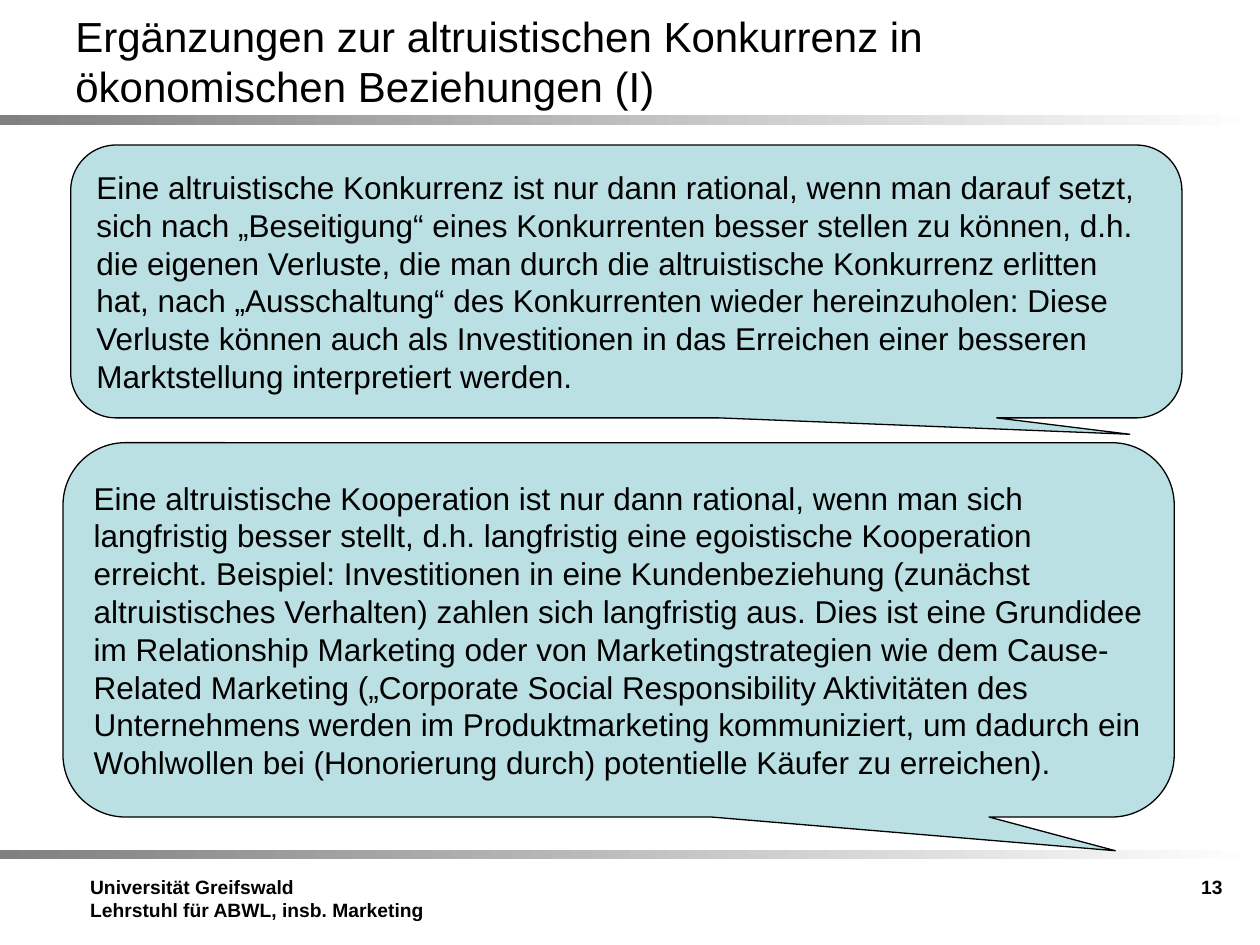
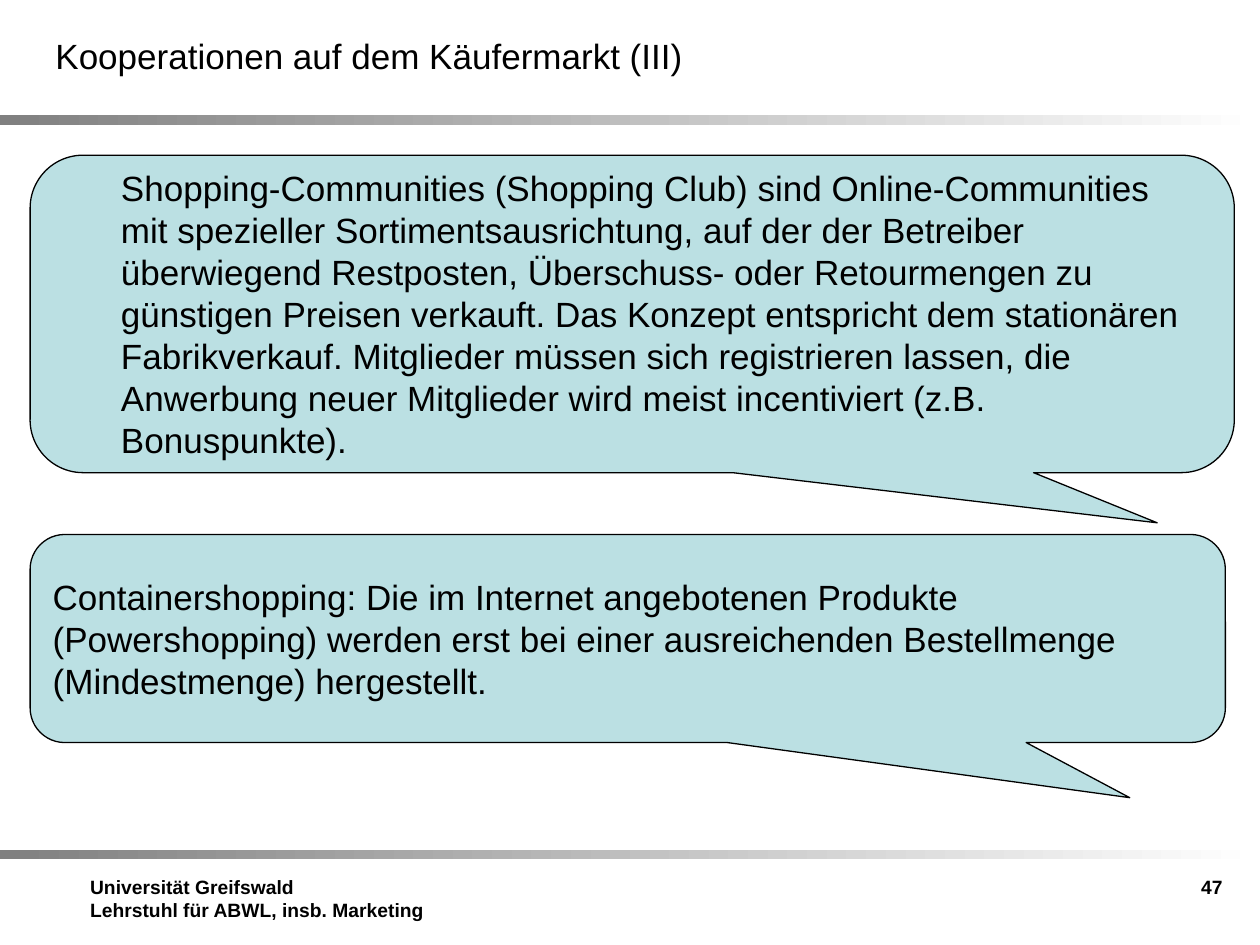
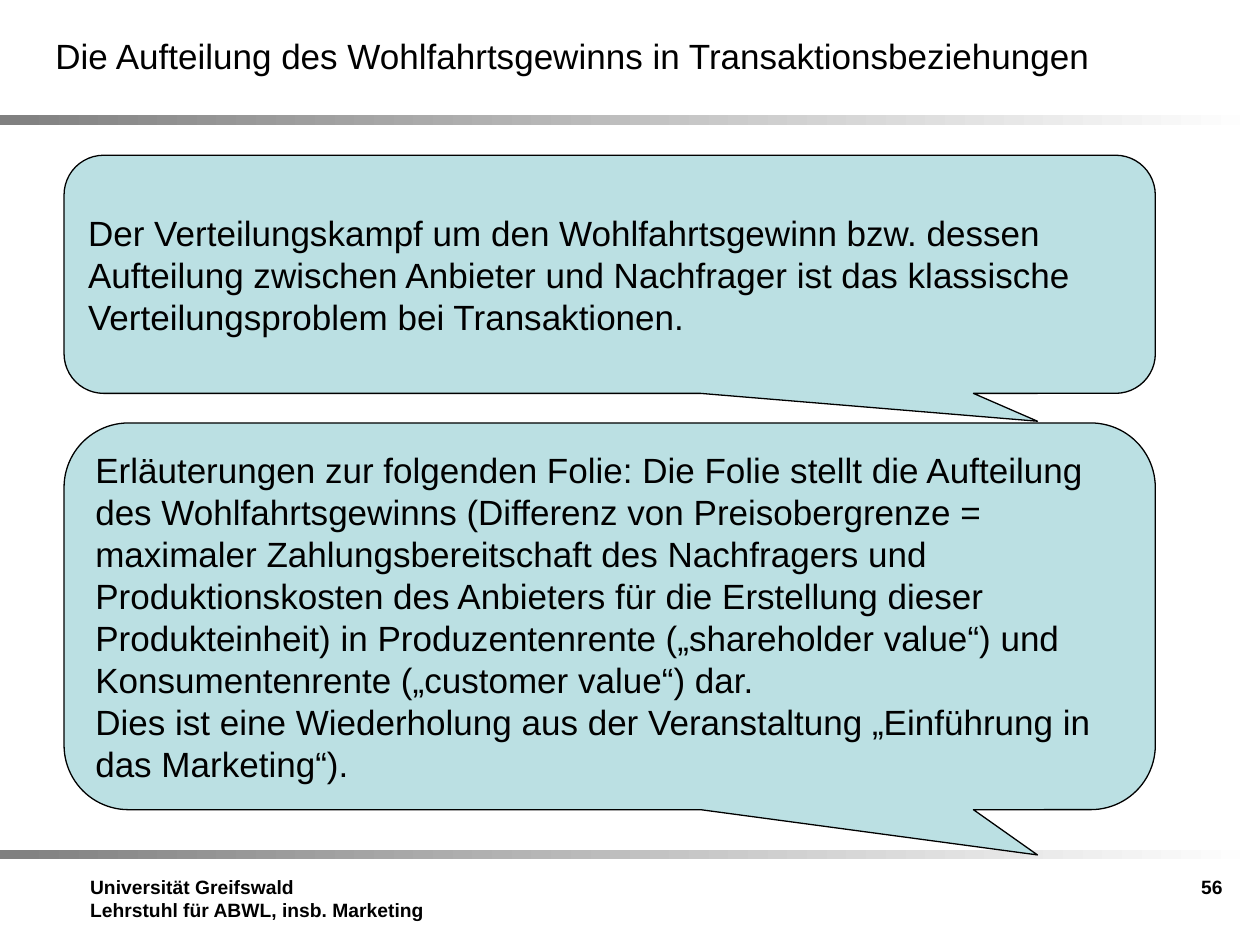
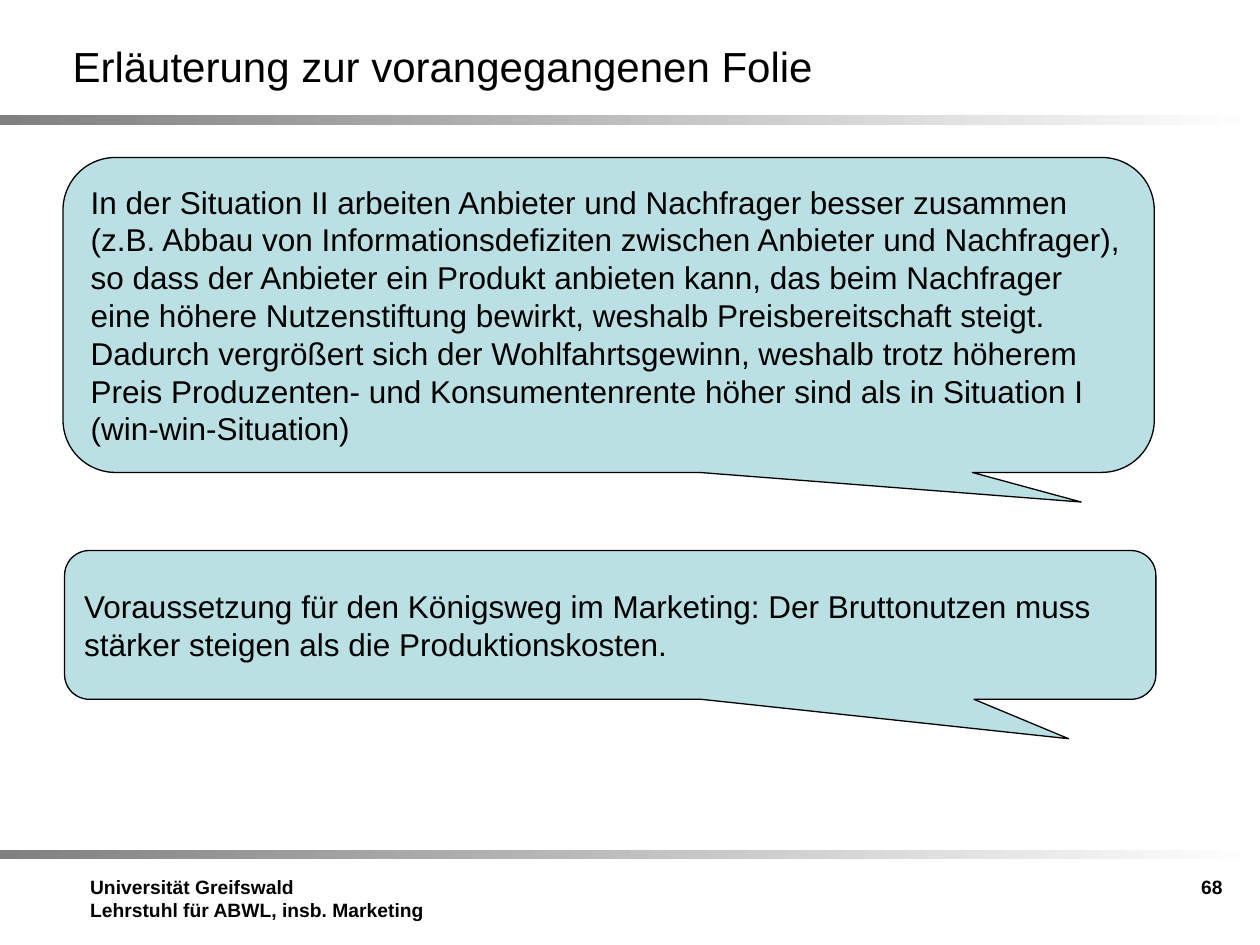
from pptx import Presentation
from pptx.dml.color import RGBColor
from pptx.enum.shapes import MSO_SHAPE
from pptx.enum.text import MSO_ANCHOR, PP_ALIGN
from pptx.util import Pt

RECT = MSO_SHAPE.RECTANGLE
BUBBLE = MSO_SHAPE.ROUNDED_RECTANGULAR_CALLOUT
TOP, MIDDLE = MSO_ANCHOR.TOP, MSO_ANCHOR.MIDDLE
LEFT, RIGHT = PP_ALIGN.LEFT, PP_ALIGN.RIGHT

FONT = "Arial"
COLORS = {"ink": "000000", "bubble": "BBE0E3", "dark": "808080", "light": "FFFFFF"}
WIDTH, HEIGHT = 720, 540
BANDS = (65.7, 485.7)
FOOTER = ("Universität Greifswald", "Lehrstuhl für ABWL, insb. Marketing")

# Title: left, top, size. Bubble: box, tip offset, text size, indent, paragraphs.
SLIDES = [
    {
        "page": 13,
        "title": ("Ergänzungen zur altruistischen Konkurrenz in ökonomischen "
                  "Beziehungen (I)", 36, 11.9, 24),
        "bubbles": [
            ((40.4, 82.9, 635, 155.9), (0.453, 0.56), 18, 0, [
                "Eine altruistische Konkurrenz ist nur dann rational, wenn man "
                "darauf setzt, sich nach „Beseitigung“ eines Konkurrenten besser "
                "stellen zu können, d.h. die eigenen Verluste, die man durch die "
                "altruistische Konkurrenz erlitten hat, nach „Ausschaltung“ des "
                "Konkurrenten wieder hereinzuholen: Diese Verluste können auch als "
                "Investitionen in das Erreichen einer besseren Marktstellung "
                "interpretiert werden."]),
            ((36, 253, 635, 213.9), (0.447, 0.59), 18, 0, [
                "Eine altruistische Kooperation ist nur dann rational, wenn man "
                "sich langfristig besser stellt, d.h. langfristig eine egoistische "
                "Kooperation erreicht. Beispiel: Investitionen in eine "
                "Kundenbeziehung (zunächst altruistisches Verhalten) zahlen sich "
                "langfristig aus. Dies ist eine Grundidee im Relationship Marketing "
                "oder von Marketingstrategien wie dem Cause-Related Marketing "
                "(„Corporate Social Responsibility Aktivitäten des Unternehmens "
                "werden im Produktmarketing kommuniziert, um dadurch ein Wohlwollen "
                "bei (Honorierung durch) potentielle Käufer zu erreichen)."]),
        ],
    },
    {
        "page": 47,
        "title": ("Kooperationen auf dem Käufermarkt (III)", 24.6, 9.1, 20),
        "bubbles": [
            ((17.2, 88.7, 688.1, 181.4), (0.436, 0.658), 20, 36, [
                "Shopping-Communities (Shopping Club) sind Online-Communities mit "
                "spezieller Sortimentsausrichtung, auf der der Betreiber "
                "überwiegend Restposten, Überschuss- oder Retourmengen zu günstigen "
                "Preisen verkauft. Das Konzept entspricht dem stationären "
                "Fabrikverkauf. Mitglieder müssen sich registrieren lassen, die "
                "Anwerbung neuer Mitglieder wird meist incentiviert (z.B. "
                "Bonuspunkte)."]),
            ((17.2, 305.4, 683, 118.9), (0.42, 0.765), 20, 0, [
                "Containershopping: Die im Internet angebotenen Produkte "
                "(Powershopping) werden erst bei einer ausreichenden Bestellmenge "
                "(Mindestmenge) hergestellt."]),
        ],
    },
    {
        "page": 56,
        "title": ("Die Aufteilung des Wohlfahrtsgewinns in "
                  "Transaktionsbeziehungen", 24.6, 9.1, 20),
        "bubbles": [
            ((36.6, 88.7, 623.6, 136.1), (0.392, 0.617), 20, 0, [
                "Der Verteilungskampf um den Wohlfahrtsgewinn bzw. dessen "
                "Aufteilung zwischen Anbieter und Nachfrager ist das klassische "
                "Verteilungsproblem bei Transaktionen."]),
            ((36.6, 241.7, 623.6, 221), (0.392, 0.617), 20, 0, [
                "Erläuterungen zur folgenden Folie: Die Folie stellt die Aufteilung "
                "des Wohlfahrtsgewinns (Differenz von Preisobergrenze = maximaler "
                "Zahlungsbereitschaft des Nachfragers und Produktionskosten des "
                "Anbieters für die Erstellung dieser Produkteinheit) in "
                "Produzentenrente („shareholder value“) und Konsumentenrente "
                "(„customer value“) dar.",
                "Dies ist eine Wiederholung aus der Veranstaltung „Einführung in "
                "das Marketing“)."]),
        ],
    },
    {
        "page": 68,
        "title": ("Erläuterung zur vorangegangenen Folie", 34.4, 14.9, 24),
        "bubbles": [
            ((36, 90, 623.6, 180), (0.433, 0.594), 18, 0, [
                "In der Situation II arbeiten Anbieter und Nachfrager besser "
                "zusammen (z.B. Abbau von Informationsdefiziten zwischen Anbieter "
                "und Nachfrager), so dass der Anbieter ein Produkt anbieten kann, "
                "das beim Nachfrager eine höhere Nutzenstiftung bewirkt, weshalb "
                "Preisbereitschaft steigt. Dadurch vergrößert sich der "
                "Wohlfahrtsgewinn, weshalb trotz höherem Preis Produzenten- und "
                "Konsumentenrente höher sind als in Situation I "
                "(win-win-Situation)"]),
            ((36.9, 314.6, 623.6, 85), (0.42, 0.765), 18, 0, [
                "Voraussetzung für den Königsweg im Marketing: Der Bruttonutzen "
                "muss stärker steigen als die Produktionskosten."]),
        ],
    },
]


def color(name):
    return RGBColor.from_string(COLORS[name])


def place(box):
    return [Pt(n) for n in box]


def write(shape, lines, size=18, bold=False, align=LEFT, anchor=TOP, indent=0):
    """Fill a shape with one paragraph for each line."""
    frame = shape.text_frame
    frame.word_wrap = True
    frame.vertical_anchor = anchor
    if indent:
        frame.margin_right = Pt(14)
    for i, line in enumerate(lines):
        para = frame.add_paragraph() if i else frame.paragraphs[0]
        para.alignment = align
        if indent:
            props = para._p.get_or_add_pPr()
            props.set("marL", str(Pt(indent)))
            props.set("indent", "0")
        run = para.add_run()
        run.text = line
        font = run.font
        font.name, font.size, font.bold = FONT, Pt(size), bold
        font.color.rgb = color("ink")


def add_text(slide, box, lines, **style):
    write(slide.shapes.add_textbox(*place(box)), lines, **style)


def add_band(slide, top):
    band = slide.shapes.add_shape(RECT, *place((0, top, WIDTH, 5.5)))
    band.shadow.inherit = False
    band.line.fill.background()
    band.fill.gradient()
    band.fill.gradient_angle = 0
    for stop, name in zip(band.fill.gradient_stops, ("dark", "light")):
        stop.color.rgb = color(name)


def add_bubble(slide, box, tip, size, indent, lines):
    """Draw a callout; tip is its offset from the centre as a share of the box."""
    bubble = slide.shapes.add_shape(BUBBLE, *place(box))
    bubble.shadow.inherit = False
    for i, value in enumerate((*tip, 0.16667)):
        bubble.adjustments[i] = value
    bubble.fill.solid()
    bubble.fill.fore_color.rgb = color("bubble")
    bubble.line.color.rgb = color("ink")
    bubble.line.width = Pt(0.75)
    write(bubble, lines, size=size, anchor=MIDDLE, indent=indent)


def add_frame(slide, page):
    """Add the bands, footer and page number that all slides share."""
    for top in BANDS:
        add_band(slide, top)
    add_text(slide, (44.4, 496.8, 209.5, 42.5), FOOTER, size=11, bold=True)
    add_text(slide, (537.9, 496.8, 167.8, 41), [str(page)],
             size=11, bold=True, align=RIGHT)


def add_title(slide, title, left, top, size):
    add_text(slide, (left, top, 648, 45.4), [title], size=size, anchor=MIDDLE)


def main():
    deck = Presentation()
    deck.slide_width, deck.slide_height = Pt(WIDTH), Pt(HEIGHT)
    for item in SLIDES:
        slide = deck.slides.add_slide(deck.slide_layouts[6])
        add_frame(slide, item["page"])
        add_title(slide, *item["title"])
        for bubble in item["bubbles"]:
            add_bubble(slide, *bubble)
    deck.save("out.pptx")


if __name__ == "__main__":
    main()
